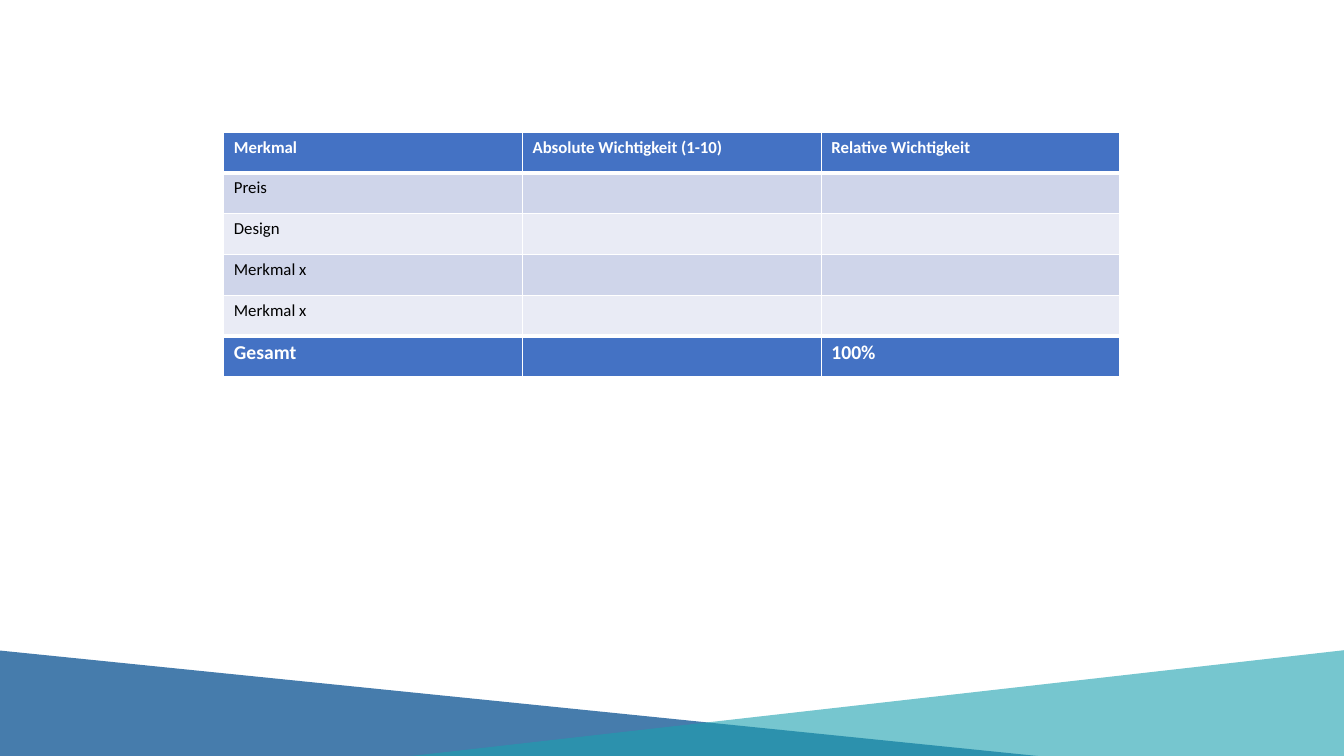
from lxml import etree
from pptx import Presentation
from pptx.dml.color import RGBColor
from pptx.enum.shapes import MSO_SHAPE
from pptx.oxml.ns import qn
from pptx.util import Inches, Pt

TRIANGLE = MSO_SHAPE.ISOSCELES_TRIANGLE

WHITE = RGBColor(0xFF, 0xFF, 0xFF)
BLACK = RGBColor(0x00, 0x00, 0x00)
NAVY = RGBColor(0x09, 0x51, 0x91)
TEAL = RGBColor(0x1B, 0xA0, 0xAF)
HEADER_BLUE = RGBColor(0x44, 0x72, 0xC4)
BANDS = (RGBColor(0xCF, 0xD5, 0xEA), RGBColor(0xE9, 0xEB, 0xF5))

FONT = "Calibri"
ROWS = [
    ("Merkmal", "Absolute Wichtigkeit (1-10)", "Relative Wichtigkeit"),
    ("Preis", "", ""),
    ("Design", "", ""),
    ("Merkmal x", "", ""),
    ("Merkmal x", "", ""),
    ("Gesamt", "", "100%"),
]


def add_triangle(s, left, top, width, height, apex, color, opacity):
    sp = s.shapes.add_shape(TRIANGLE, Inches(left), Inches(top),
                            Inches(width), Inches(height))
    sp.adjustments[0] = apex
    sp.shadow.inherit = False
    sp.line.fill.background()
    sp.fill.solid()
    sp.fill.fore_color.rgb = color
    clr = sp.fill._xPr.find(".//" + qn("a:srgbClr"))
    etree.SubElement(clr, qn("a:alpha"), val=str(opacity * 1000))


def set_borders(cell, top, bottom):
    tcPr = cell._tc.get_or_add_tcPr()
    for side, width in (("L", 1), ("R", 1), ("T", top), ("B", bottom)):
        ln = etree.SubElement(tcPr, qn("a:ln" + side), w=str(Pt(width)))
        fill = etree.SubElement(ln, qn("a:solidFill"))
        etree.SubElement(fill, qn("a:srgbClr"), val=str(WHITE))


def style_cell(cell, text, fill, color, size, bold):
    cell.fill.solid()
    cell.fill.fore_color.rgb = fill
    cell.text = text
    font = cell.text_frame.paragraphs[0].font
    font.name = FONT
    font.size = Pt(size)
    font.bold = bold
    font.color.rgb = color


def add_weight_table(s):
    last = len(ROWS) - 1
    table = s.shapes.add_table(len(ROWS), len(ROWS[0]), Inches(2.22), Inches(1.31),
                               Inches(8.89), Inches(2.43)).table
    for i, row in enumerate(ROWS):
        strong = i in (0, last)
        fill = HEADER_BLUE if strong else BANDS[(i - 1) % 2]
        # Thick rules below the header and above the total
        top = 3 if i in (1, last) else 1
        bottom = 3 if i in (0, last - 1) else 1
        for j, text in enumerate(row):
            cell = table.cell(i, j)
            set_borders(cell, top, bottom)
            style_cell(cell, text, fill, WHITE if strong else BLACK,
                       14 if i == last else 12, strong)


def main():
    prs = Presentation()
    prs.slide_width = Inches(13.33)
    prs.slide_height = Inches(7.5)
    s = prs.slides.add_slide(prs.slide_layouts[6])

    # Footer decoration
    add_triangle(s, -7.68, 6.45, 19.74, 1.23, 0.387, NAVY, 75)
    add_triangle(s, 1.96, 6.45, 22.75, 1.29, 0.5, TEAL, 60)

    # Table of feature weights
    add_weight_table(s)

    prs.save("out.pptx")


if __name__ == "__main__":
    main()
